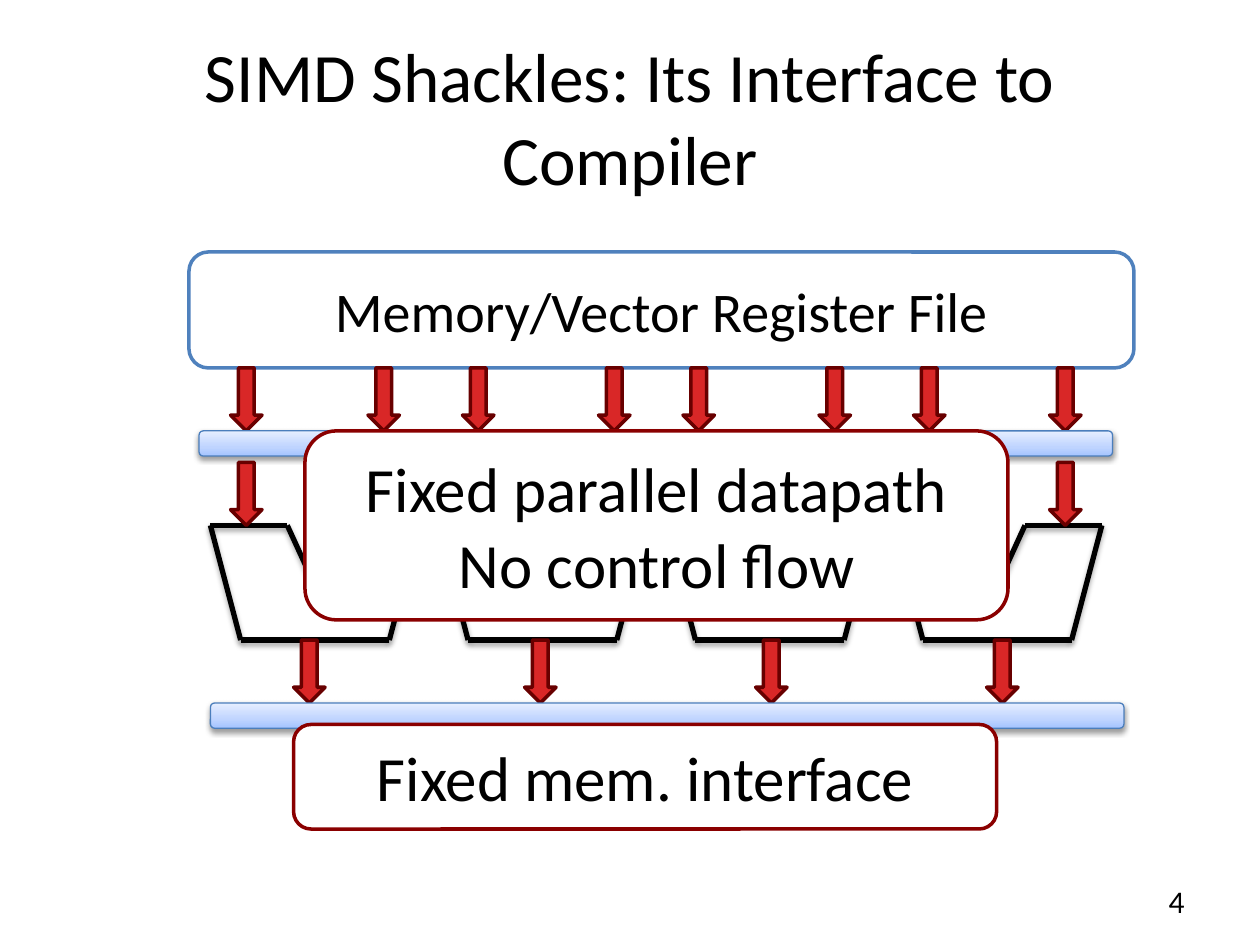
from copy import deepcopy

from pptx import Presentation
from pptx import util as u
from pptx.dml.color import RGBColor
from pptx.enum import shapes, text
from pptx.oxml import parse_xml
from pptx.oxml.ns import nsdecls, qn

FONT = "Calibri"
COLORS = {
    "black": "000000", "white": "FFFFFF", "blue": "4F81BD", "bar_line": "4B7EBC",
    "arrow": "D92727", "arrow_line": "680000", "callout": "8A0000",
}
BAR_STOPS = [(0, "A4C4FF"), (0.35, "BFD4FF"), (1, "E6EEFF")]


def rgb(name):
    """Return the named colour."""
    return RGBColor.from_string(COLORS[name])


def add_shadow(sp, alpha, distance):
    """Give a shape or connector a soft shadow straight below it."""
    spPr = sp._element.spPr
    for old in spPr.findall(qn("a:effectLst")):
        spPr.remove(old)
    spPr.append(parse_xml(
        f'<a:effectLst {nsdecls("a")}><a:outerShdw blurRad="{u.Pt(3.1)}" '
        f'dist="{u.Pt(distance)}" dir="5400000" rotWithShape="0">'
        f'<a:srgbClr val="{COLORS["black"]}"><a:alpha val="{alpha * 1000}"/></a:srgbClr>'
        '</a:outerShdw></a:effectLst>'))


def add_box(s, kind, box, fill, line, width=2):
    """Add a preset shape with a flat fill and an outline."""
    sp = s.shapes.add_shape(kind, *map(u.Inches, box))
    sp.shadow.inherit = False
    sp.fill.solid()
    sp.fill.fore_color.rgb = rgb(fill)
    sp.line.color.rgb = rgb(line)
    sp.line.width = u.Pt(width)
    return sp


def set_text(sp, content, size, align=text.PP_ALIGN.CENTER):
    """Fill a shape with black text, anchored in the middle."""
    tf = sp.text_frame
    tf.text = content
    tf.word_wrap = True
    tf.vertical_anchor = text.MSO_ANCHOR.MIDDLE
    for p in tf.paragraphs:
        p.alignment = align
        for r in p.runs:
            r.font.name = FONT
            r.font.size = u.Pt(size)
            r.font.color.rgb = rgb("black")


def add_label_box(s, box, content, size, line):
    """Add a white rounded box with centred text."""
    sp = add_box(s, shapes.MSO_SHAPE.ROUNDED_RECTANGLE, box, "white", line)
    set_text(sp, content, size)


def add_arrows(s, lefts, top):
    """Add a row of red down arrows."""
    for left in lefts:
        add_box(s, shapes.MSO_SHAPE.DOWN_ARROW, (left, top, 0.25, 0.5),
                "arrow", "arrow_line")


def add_bar(s, box):
    """Add a pipeline register bar with a blue gradient."""
    sp = add_box(s, shapes.MSO_SHAPE.ROUNDED_RECTANGLE, box, "white", "bar_line", 0.75)
    sp.fill.gradient()
    sp.fill.gradient_angle = 90
    stops = sp._element.spPr.find(".//" + qn("a:gsLst"))
    stops.insert(1, deepcopy(stops[0]))
    for stop, (position, color) in zip(sp.fill.gradient_stops, BAR_STOPS):
        stop.position = position
        stop.color.rgb = RGBColor.from_string(color)
    add_shadow(sp, 38, 1.6)


def add_alu(s, box):
    """Draw a notched functional unit from seven lines."""
    x, y, w, h = box
    inset, shoulder, notch = 0.24, 0.61, 0.48
    points = [(x, y), (x + shoulder, y), (x + w / 2, y + notch),
              (x + w - shoulder, y), (x + w, y),
              (x + w - inset, y + h), (x + inset, y + h)]
    for start, end in zip(points, points[1:] + points[:1]):
        c = s.shapes.add_connector(shapes.MSO_CONNECTOR.STRAIGHT,
                                   *map(u.Inches, start + end))
        c.line.color.rgb = rgb("black")
        c.line.width = u.Pt(3)
        add_shadow(c, 35, 1.8)


def add_title(s, box, content):
    """Place and format the title placeholder."""
    sp = s.shapes.title
    sp.left, sp.top, sp.width, sp.height = map(u.Inches, box)
    set_text(sp, content, 39.6)


def add_datapath(s, box):
    """Draw the register file, the four units and the arrows between them."""
    x, y, w, h = box
    for i in range(4):
        add_alu(s, (x + 0.17 + 1.805 * i, y + 2.17, 1.66, 0.91))
    add_label_box(s, (x, y, w, 0.92), "Memory/Vector Register File", 32, "blue")
    inputs = [x + dx for dx in (0.33, 1.42, 2.17, 3.25, 3.92, 5, 5.75, 6.83)]
    add_arrows(s, inputs, y + 0.92)
    add_arrows(s, [x + 0.83 + 5.5 / 3 * i for i in range(4)], y + 3.08)
    add_bar(s, (x + 0.08, y + 1.42, w - 0.25, 0.2))
    add_arrows(s, (inputs[0], inputs[-1]), y + 1.67)
    add_bar(s, (x + 0.17, y + h - 0.2, w - 0.25, 0.2))


def add_page_number(s, box, number):
    """Add the right-aligned page number."""
    sp = s.shapes.add_textbox(*map(u.Inches, box))
    set_text(sp, number, 18, text.PP_ALIGN.RIGHT)


def main():
    """Build and save the slide."""
    prs = Presentation()
    prs.slide_width, prs.slide_height = u.Inches(10), u.Inches(7.5)
    s = prs.slides.add_slide(prs.slide_layouts[5])
    add_title(s, (0.5, 0.3, 9, 1.25), "SIMD Shackles: Its Interface to Compiler")
    add_datapath(s, (1.5, 2, 7.5, 3.78))
    add_label_box(s, (2.33, 5.75, 5.58, 0.83), "Fixed mem. interface", 36, "callout")
    add_label_box(s, (2.42, 3.42, 5.58, 1.5),
                  "Fixed parallel datapath\nNo control flow", 36, "callout")
    add_page_number(s, (7.17, 6.95, 2.33, 0.4), "4")
    prs.save("out.pptx")


if __name__ == "__main__":
    main()
